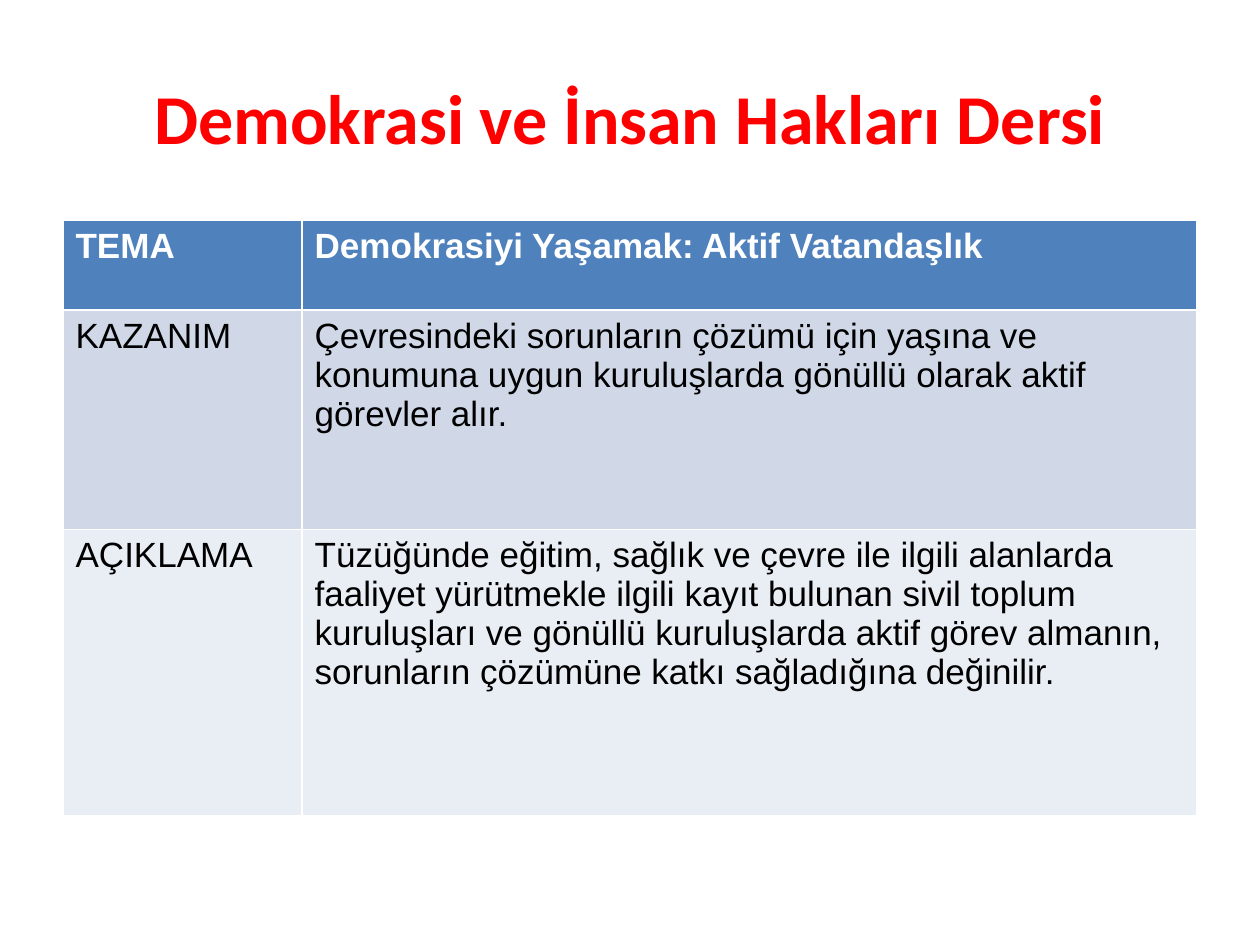
from pptx import Presentation
from pptx.dml.color import RGBColor
from pptx.enum import text
from pptx.util import Cm, Pt

TITLE = "Demokrasi ve İnsan Hakları Dersi"
ROWS = [
    ("TEMA", "Demokrasiyi Yaşamak: Aktif Vatandaşlık"),
    ("KAZANIM", "Çevresindeki sorunların çözümü için yaşına ve konumuna uygun "
     "kuruluşlarda gönüllü olarak aktif görevler alır."),
    ("AÇIKLAMA", "Tüzüğünde eğitim, sağlık ve çevre ile ilgili alanlarda faaliyet "
     "yürütmekle ilgili kayıt bulunan sivil toplum kuruluşları ve gönüllü "
     "kuruluşlarda aktif görev almanın, sorunların çözümüne katkı sağladığına "
     "değinilir."),
]
FILLS = ["4F81BD", "D0D8E8", "E9EDF4"]
WIDTHS = [4.82, 18.04]
HEIGHTS = [1.8, 4.42, 5.77]
LEFT, TOP = 1.27, 4.45

HEADING = {"name": "Calibri", "size": Pt(40), "bold": True}
HEAD = {"name": "Arial", "size": Pt(20), "bold": True}
BODY = {**HEAD, "bold": False}


def paint(item, color):
    item.rgb = RGBColor.from_string(color)


def style(font, form, color):
    for key, value in form.items():
        setattr(font, key, value)
    paint(font.color, color)


deck = Presentation()
deck.slide_width, deck.slide_height = Cm(25.4), Cm(19.05)
slide = deck.slides.add_slide(deck.slide_layouts[5])

title = slide.shapes.title
title.left, title.top = Cm(LEFT), Cm(0.76)
title.width, title.height = Cm(sum(WIDTHS)), Cm(3.18)
frame = title.text_frame
frame.text = TITLE
frame.vertical_anchor = text.MSO_ANCHOR.MIDDLE
line = frame.paragraphs[0]
line.alignment = text.PP_ALIGN.CENTER
style(line.runs[0].font, HEADING, "FF0000")

# The default table style supplies the white rules between cells.
table = slide.shapes.add_table(
    len(ROWS), len(WIDTHS), Cm(LEFT), Cm(TOP),
    Cm(sum(WIDTHS)), Cm(sum(HEIGHTS))).table
for col, width in zip(table.columns, WIDTHS):
    col.width = Cm(width)
for r, (words, fill, height) in enumerate(zip(ROWS, FILLS, HEIGHTS)):
    table.rows[r].height = Cm(height)
    form, ink = (BODY, "000000") if r else (HEAD, "FFFFFF")
    for cell, word in zip(table.rows[r].cells, words):
        cell.text = word
        cell.fill.solid()
        paint(cell.fill.fore_color, fill)
        style(cell.text_frame.paragraphs[0].runs[0].font, form, ink)

deck.save("out.pptx")
